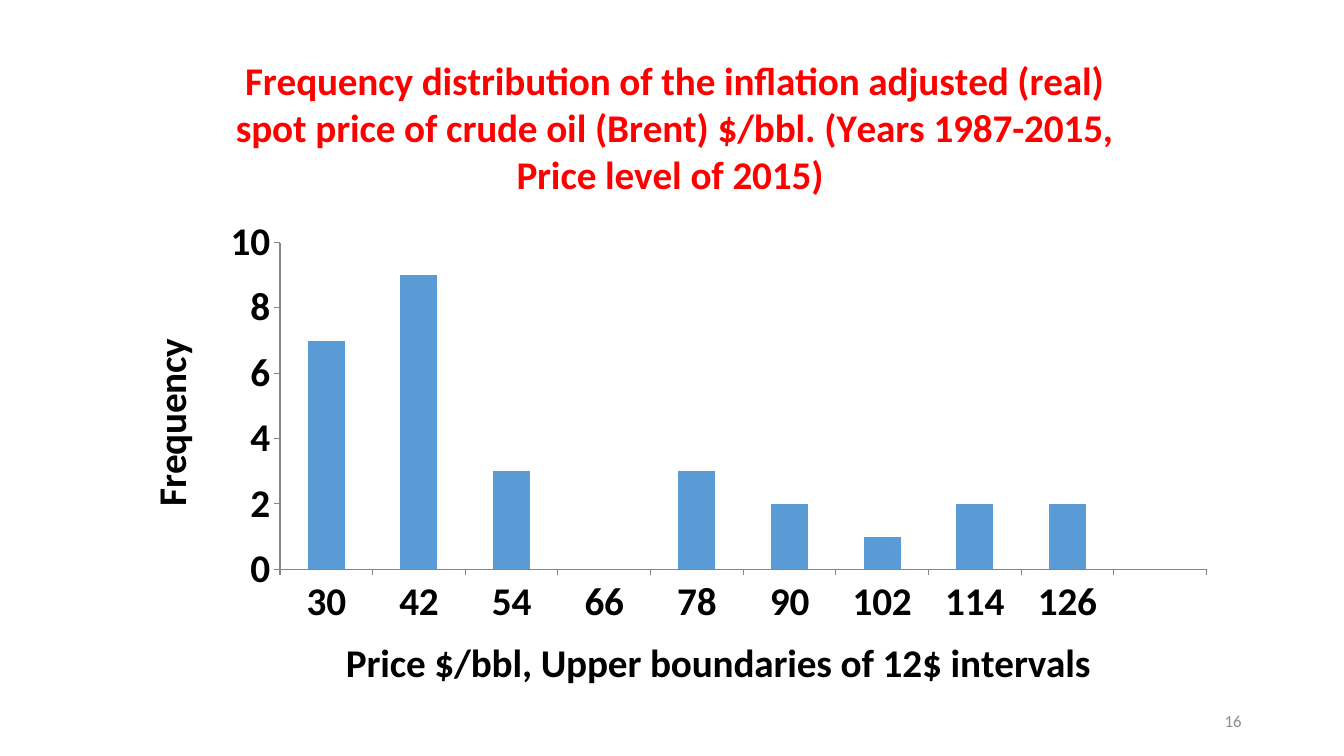
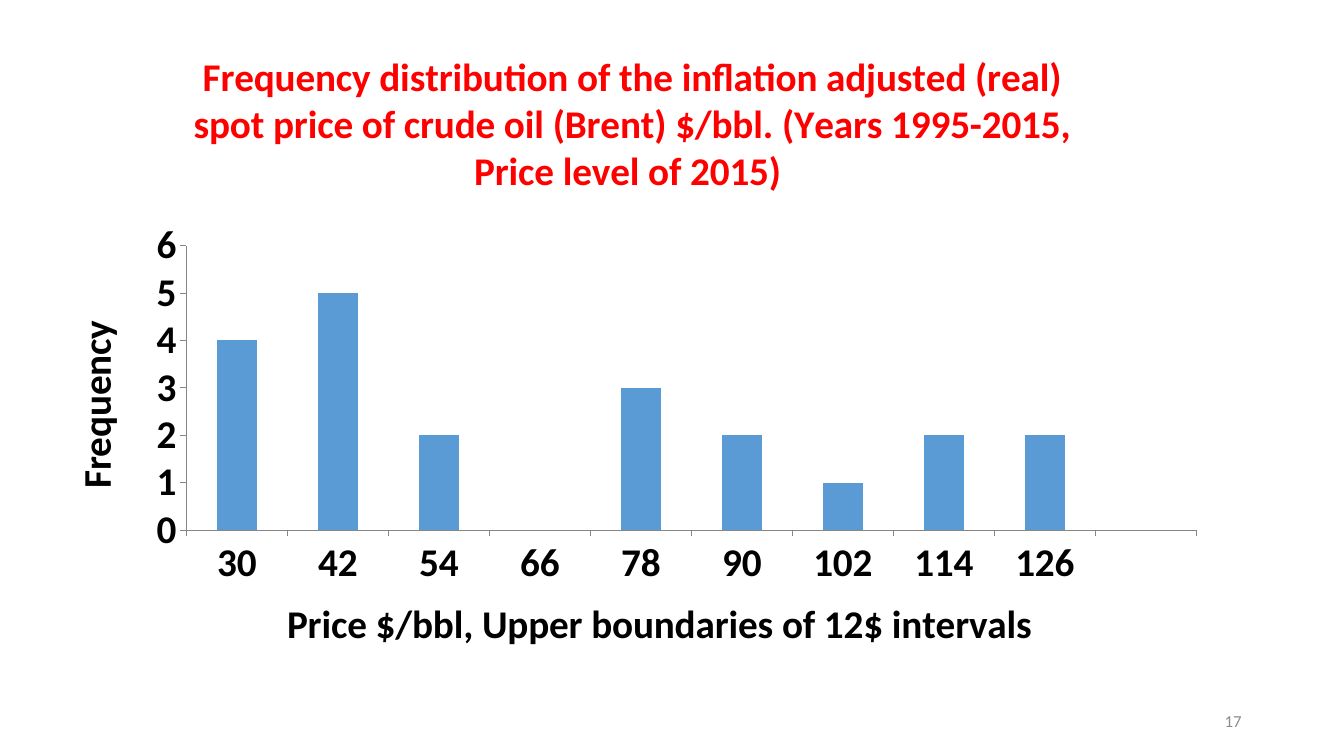
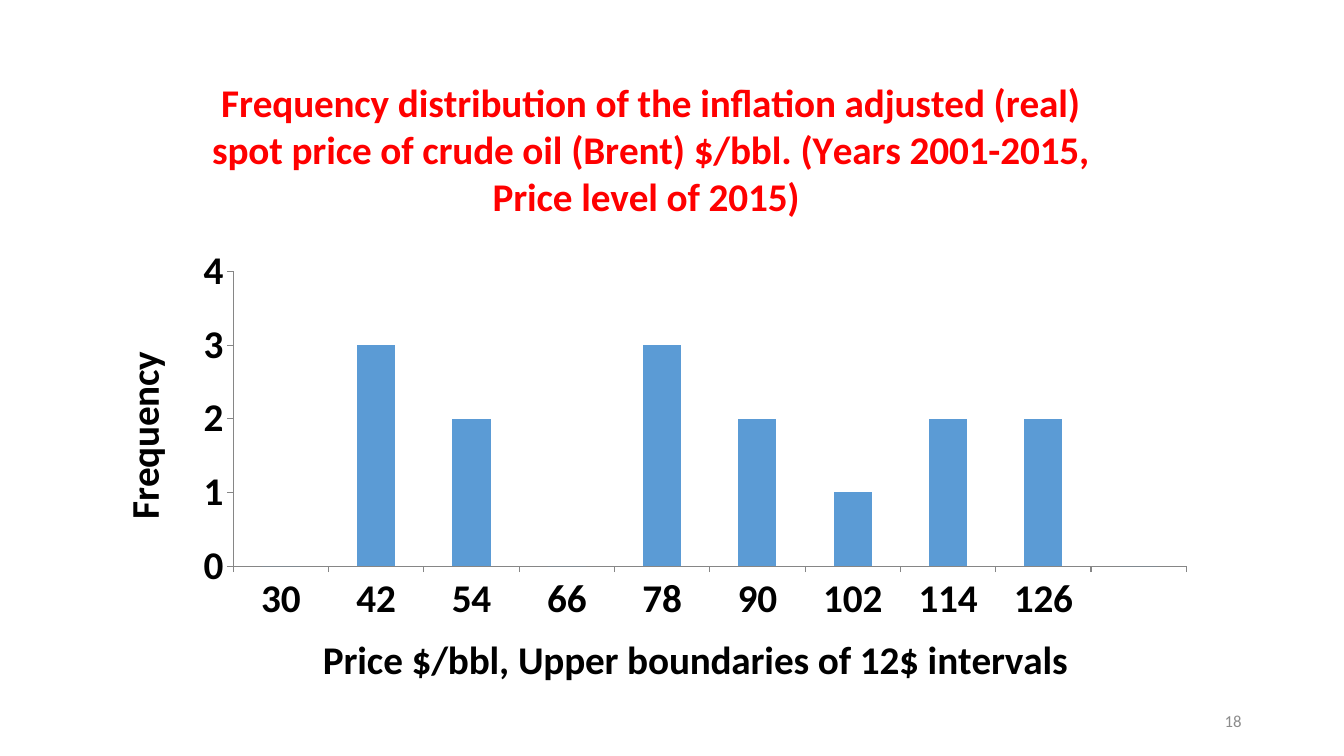
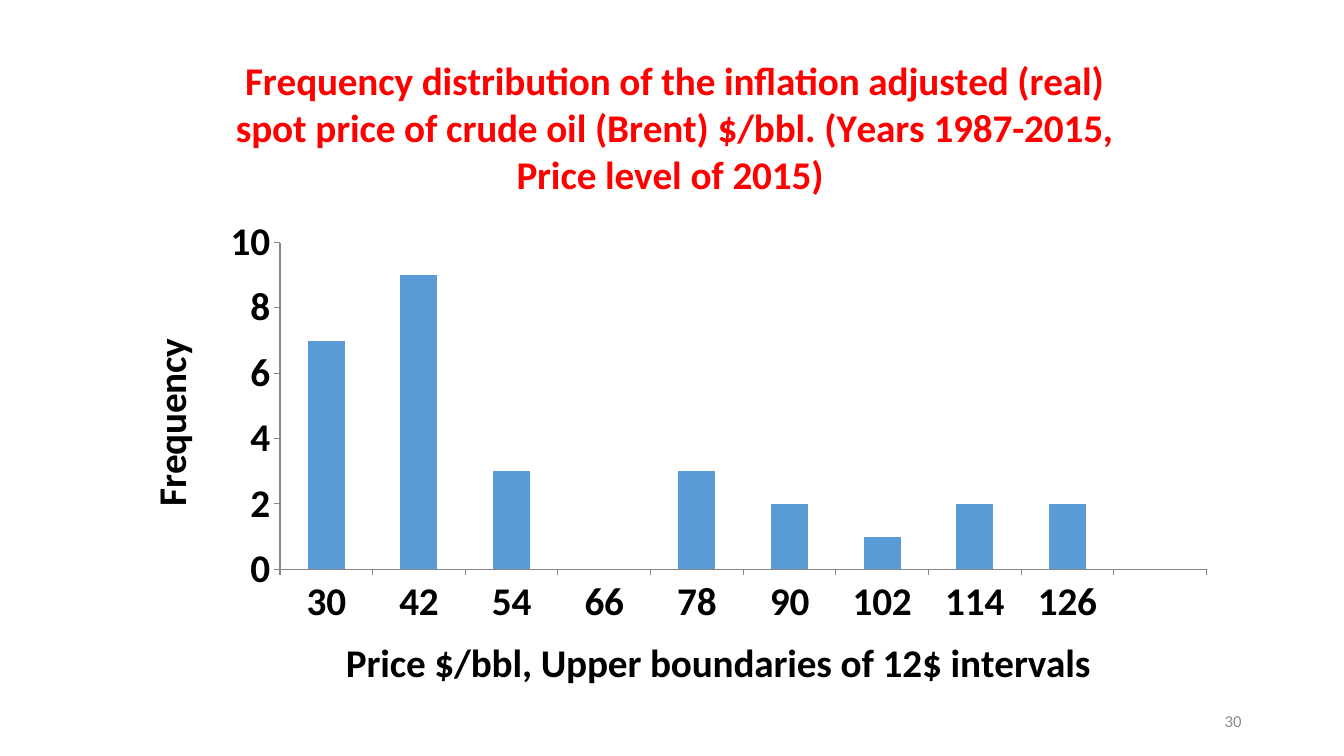
from collections import namedtuple
from dataclasses import dataclass

from pptx import Presentation
from pptx.chart.data import CategoryChartData
from pptx.dml.color import RGBColor
from pptx.enum.chart import XL_CHART_TYPE as ChartType, XL_TICK_MARK as TickMark
from pptx.enum.text import MSO_ANCHOR as Anchor, PP_ALIGN as Align
from pptx.oxml import parse_xml
from pptx.oxml.ns import nsdecls, qn
from pptx.util import Pt

Box = namedtuple("Box", "left top width height")
Scale = namedtuple("Scale", "maximum step")
Histogram = namedtuple("Histogram", "first_year box plot price_left scale frequencies")


@dataclass(frozen=True)
class Theme:
    font: str = "Calibri"
    title: RGBColor = RGBColor(0xFF, 0x00, 0x00)
    text: RGBColor = RGBColor(0x00, 0x00, 0x00)
    bar: RGBColor = RGBColor(0x5B, 0x9B, 0xD5)
    axis: RGBColor = RGBColor(0x86, 0x86, 0x86)
    number: RGBColor = RGBColor(0x8C, 0x8C, 0x8C)
    chart_size: int = 28
    number_size: int = 12


THEME = Theme()
SLIDE_WIDTH, SLIDE_HEIGHT = 960, 540
NUMBER_BOX = Box(678, 500.5, 216, 29)
PRICE_TITLE_GAP = 42.6
BOUNDARIES = [str(price) for price in range(30, 127, 12)] + [""]
TITLE = ("Frequency distribution of the inflation adjusted (real) spot price of "
         "crude oil (Brent) $/bbl. (Years {}-2015, Price level of 2015) ")
PRICE_TITLE = "Price $/bbl, Upper boundaries of 12$ intervals"
FREQUENCY_TITLE = "Frequency"

# The plot box and the left edge of the price title are relative to the chart box.
SINCE_1987 = Histogram(1987, Box(81.7, 19.6, 800, 491), Box(118.3, 153.7, 661.8, 233.4),
                       160.3, Scale(10, 2), (7, 9, 3, 0, 3, 2, 1, 2, 2, 0))
SINCE_1995 = Histogram(1995, Box(31.7, 16.6, 839.5, 499.7), Box(101.4, 158.9, 721.5, 203.3),
                       168.3, Scale(6, 1), (4, 5, 2, 0, 3, 2, 1, 2, 2, 0))
SINCE_2001 = Histogram(2001, Box(66.2, 36, 797, 471.6), Box(100.4, 157.9, 680.9, 210.6),
                       159.5, Scale(4, 1), (0, 3, 2, 0, 3, 2, 1, 2, 2, 0))
PAGES = [(16, SINCE_1987), (17, SINCE_1995), (18, SINCE_2001), (30, SINCE_1987)]


def in_points(box):
    return [Pt(length) for length in box]


def style_font(font, size, color, bold):
    font.name = THEME.font
    font.size = Pt(size)
    font.bold = bold
    font.color.rgb = color


def set_title(owner, text, color):
    """Title a chart or an axis through its title's text frame."""
    text_frame = owner.text_frame
    text_frame.text = text
    style_font(text_frame.paragraphs[0].runs[0].font, THEME.chart_size, color, True)


def style_axis(axis, title):
    axis.has_major_gridlines = False
    axis.major_tick_mark = TickMark.OUTSIDE
    axis.minor_tick_mark = TickMark.NONE
    axis.format.line.color.rgb = THEME.axis
    axis.format.line.width = Pt(0.75)
    style_font(axis.tick_labels.font, THEME.chart_size, THEME.text, True)
    set_title(axis.axis_title, title, THEME.text)


def set_layout(element, index, target="", **fractions):
    """Fix a chart part at fractions of the chart box."""
    for layout in element.findall(qn("c:layout")):
        element.remove(layout)
    places = "".join(f'<c:{key} val="{value:.4f}"/>' for key, value in fractions.items())
    element.insert(index, parse_xml(
        f'<c:layout {nsdecls("c")}><c:manualLayout>{target}'
        f'<c:xMode val="edge"/><c:yMode val="edge"/>{places}'
        '</c:manualLayout></c:layout>'))


def arrange_chart(chart, histogram):
    """Place the plot in the chart box, and the price title below the plot."""
    box, plot = histogram.box, histogram.plot
    set_layout(chart.element.find(".//" + qn("c:plotArea")), 0,
               '<c:layoutTarget val="inner"/>',
               x=plot.left / box.width, y=plot.top / box.height,
               w=plot.width / box.width, h=plot.height / box.height)
    price_top = plot.top + plot.height + PRICE_TITLE_GAP
    set_layout(chart.category_axis.axis_title.element, 1,
               x=histogram.price_left / box.width, y=price_top / box.height)


def add_histogram(slide, histogram):
    data = CategoryChartData()
    data.categories = BOUNDARIES
    data.add_series("Series 1", histogram.frequencies)
    chart = slide.shapes.add_chart(
        ChartType.COLUMN_CLUSTERED, *in_points(histogram.box), data).chart
    chart.has_legend = False
    style_font(chart.font, 10, THEME.text, False)
    set_title(chart.chart_title, TITLE.format(histogram.first_year), THEME.title)

    style_axis(chart.category_axis, PRICE_TITLE)
    style_axis(chart.value_axis, FREQUENCY_TITLE)
    chart.value_axis.minimum_scale = 0
    chart.value_axis.maximum_scale = histogram.scale.maximum
    chart.value_axis.major_unit = histogram.scale.step

    columns = chart.plots[0]
    columns.gap_width = 150
    columns.vary_by_categories = False
    fill = columns.series[0].format.fill
    fill.solid()
    fill.fore_color.rgb = THEME.bar
    arrange_chart(chart, histogram)


def add_slide_number(slide, number, box):
    text_frame = slide.shapes.add_textbox(*in_points(box)).text_frame
    text_frame.word_wrap = True
    text_frame.vertical_anchor = Anchor.MIDDLE
    text_frame.text = str(number)
    paragraph = text_frame.paragraphs[0]
    paragraph.alignment = Align.RIGHT
    style_font(paragraph.runs[0].font, THEME.number_size, THEME.number, False)


def main():
    presentation = Presentation()
    presentation.slide_width = Pt(SLIDE_WIDTH)
    presentation.slide_height = Pt(SLIDE_HEIGHT)
    blank = presentation.slide_layouts[6]
    for number, histogram in PAGES:
        slide = presentation.slides.add_slide(blank)
        add_histogram(slide, histogram)
        add_slide_number(slide, number, NUMBER_BOX)
    presentation.save("out.pptx")


if __name__ == "__main__":
    main()
